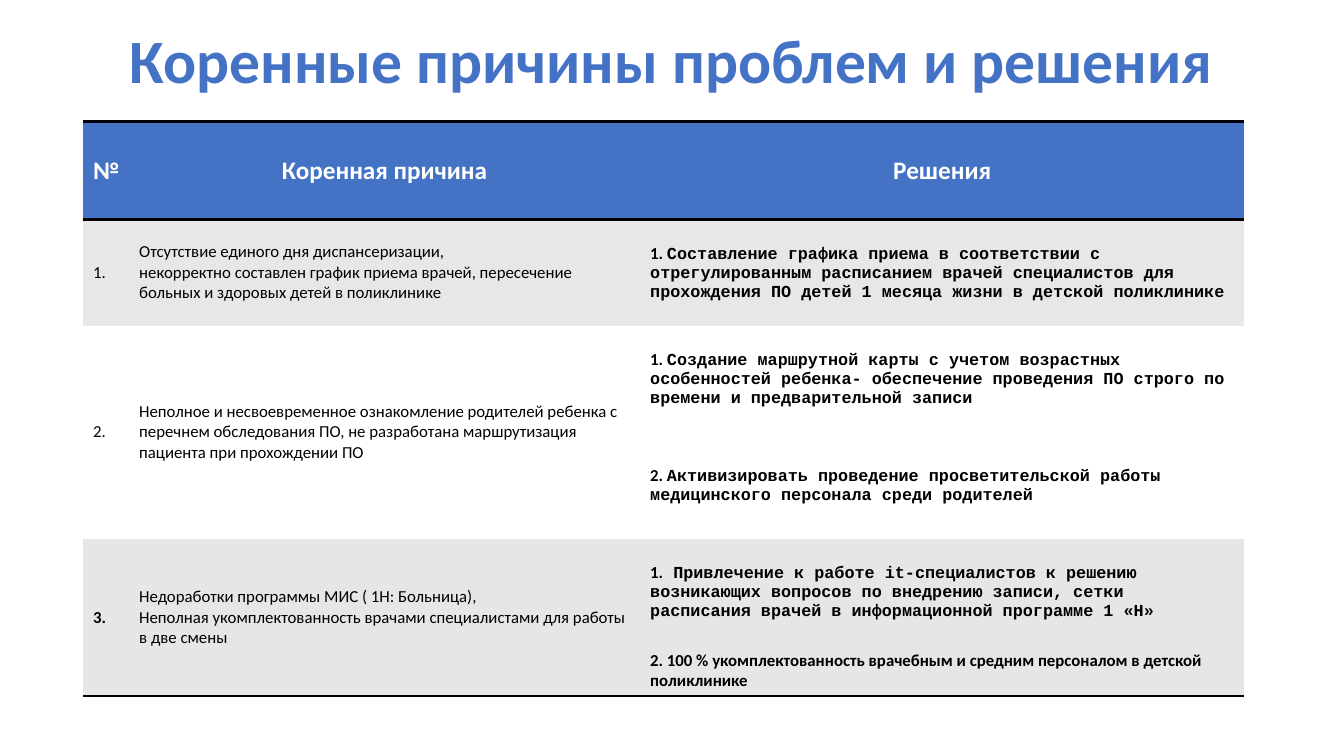
from pptx import Presentation
from pptx.dml.color import RGBColor
from pptx.enum.text import MSO_ANCHOR as Anchor, PP_ALIGN as Align
from pptx.oxml import parse_xml
from pptx.oxml.ns import nsdecls, qn
from pptx.util import Pt

COLORS = {"blue": "4472C4", "white": "FFFFFF", "black": "000000",
          "band": "E7E7E7", "last_band": "E7E6E6"}
SANS, MONO = "Calibri", "Courier New"
NO_STYLE = "{2D5ABB26-0587-4C30-8999-92F81FD0307C}"
COLUMN_WIDTHS = [33, 365, 431.5]
ROW_HEIGHTS = [70, 76, 76, 76, 76, 36.5]
ROW_FILLS = ["blue", "band", "white", "white", "last_band", "last_band"]
HEADINGS = ["№", "Коренная причина", "Решения"]

# First row, last row, number, number is bold, cause paragraphs
CAUSES = [
    (1, 1, "1.", False,
     ["Отсутствие единого дня диспансеризации,",
      "некорректно составлен график приема врачей, пересечение больных и "
      "здоровых детей в поликлинике"]),
    (2, 3, "2.", False,
     ["Неполное и несвоевременное ознакомление родителей ребенка с перечнем "
      "обследования ПО, не разработана маршрутизация пациента при "
      "прохождении ПО"]),
    (4, 5, "3.", True,
     ["Недоработки программы МИС ( 1Н: Больница),",
      "Неполная укомплектованность врачами специалистами для работы в две "
      "смены"]),
]

# One entry per body row: (text, font) spans
SOLUTIONS = [
    [("1. ", SANS),
     ("Составление графика приема в соответствии с отрегулированным "
      "расписанием врачей специалистов для прохождения ПО детей 1 месяца "
      "жизни в детской поликлинике", MONO)],
    [("1. ", SANS),
     ("Создание маршрутной карты с учетом возрастных особенностей ребенка- "
      "обеспечение проведения ПО строго по времени и предварительной записи",
      MONO)],
    [("2. ", SANS),
     ("Активизировать проведение просветительской работы медицинского "
      "персонала среди родителей", MONO)],
    [("1.", SANS),
     (" Привлечение к работе it-специалистов к решению возникающих вопросов "
      "по внедрению записи, сетки расписания врачей в информационной "
      "программе 1 «Н»", MONO)],
    [("2. 100 % укомплектованность врачебным и средним персоналом в детской "
      "поликлинике", SANS)],
]


def rgb(name):
    return RGBColor.from_string(COLORS[name])


def write(frame, paragraphs, size, color="black", bold=False, align=Align.LEFT):
    """Fill a text frame with paragraphs, each a list of (text, font) spans."""
    for index, spans in enumerate(paragraphs):
        para = frame.add_paragraph() if index else frame.paragraphs[0]
        para.alignment = align
        for text, font in spans:
            span = para.add_run()
            span.text = text
            span.font.name = font
            span.font.size = Pt(size)
            span.font.bold = bold
            span.font.color.rgb = rgb(color)


def add_title(page, text):
    box = page.shapes.add_textbox(Pt(66), Pt(12.5), Pt(828), Pt(66))
    frame = box.text_frame
    frame.word_wrap = True
    frame.vertical_anchor = Anchor.MIDDLE
    write(frame, [[(text, SANS)]], 44, "blue", True, Align.CENTER)
    frame.paragraphs[0].line_spacing = 0.9


def add_borders(cell, sides):
    """Draw black rules on the given sides, listed in the order T, B."""
    properties = cell._tc.get_or_add_tcPr()
    for position, side in enumerate(sides):
        properties.insert(position, parse_xml(
            f'<a:ln{side} {nsdecls("a")} w="{Pt(2)}"><a:solidFill>'
            f'<a:srgbClr val="{COLORS["black"]}"/></a:solidFill></a:ln{side}>'))


def add_plain_table(page):
    rows, columns = len(ROW_HEIGHTS), len(COLUMN_WIDTHS)
    table = page.shapes.add_table(
        rows, columns, Pt(59.25), Pt(86.75),
        Pt(sum(COLUMN_WIDTHS)), Pt(sum(ROW_HEIGHTS))).table
    table.first_row = table.horz_banding = False
    table._tbl.tblPr.find(qn("a:tableStyleId")).text = NO_STYLE
    for column, width in zip(table.columns, COLUMN_WIDTHS):
        column.width = Pt(width)
    for row, height, fill in zip(table.rows, ROW_HEIGHTS, ROW_FILLS):
        row.height = Pt(height)
        for cell in row.cells:
            cell.vertical_anchor = Anchor.MIDDLE
            cell.fill.solid()
            cell.fill.fore_color.rgb = rgb(fill)
    return table


def fill_table(table):
    for column, heading in enumerate(HEADINGS):
        cell = table.cell(0, column)
        write(cell.text_frame, [[(heading, SANS)]], 18, "white", True, Align.CENTER)
        add_borders(cell, "TB")
        add_borders(table.cell(len(ROW_HEIGHTS) - 1, column), "B")

    for first, last, number, number_bold, cause in CAUSES:
        for column, lines, bold in [(0, [number], number_bold), (1, cause, False)]:
            cell = table.cell(first, column)
            if last > first:
                cell.merge(table.cell(last, column))
            if last == len(ROW_HEIGHTS) - 1:
                add_borders(cell, "B")
            write(cell.text_frame, [[(line, SANS)] for line in lines], 12, bold=bold)

    for row, spans in enumerate(SOLUTIONS, start=1):
        write(table.cell(row, 2).text_frame, [spans], 12, bold=True)


def main():
    deck = Presentation()
    deck.slide_width, deck.slide_height = Pt(960), Pt(540)
    page = deck.slides.add_slide(deck.slide_layouts[6])
    add_title(page, "Коренные причины проблем и решения")
    fill_table(add_plain_table(page))
    deck.save("out.pptx")


if __name__ == "__main__":
    main()
